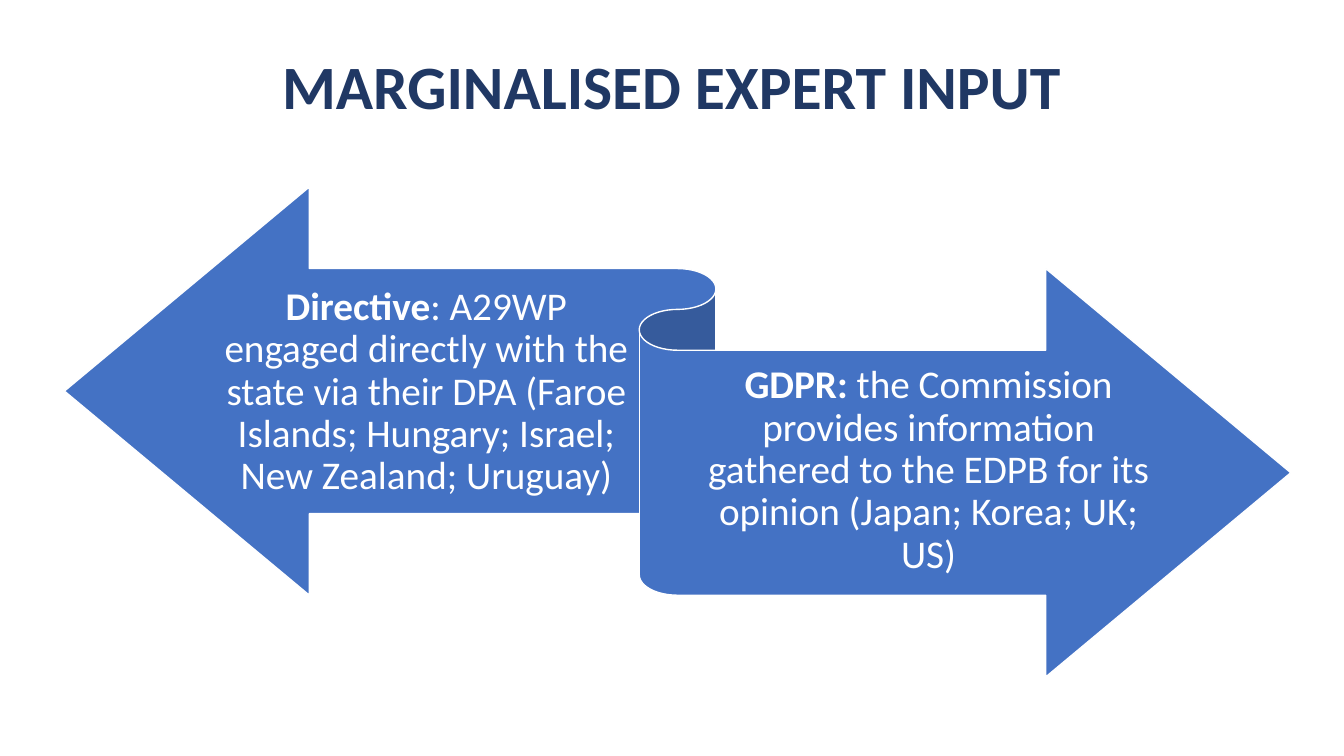
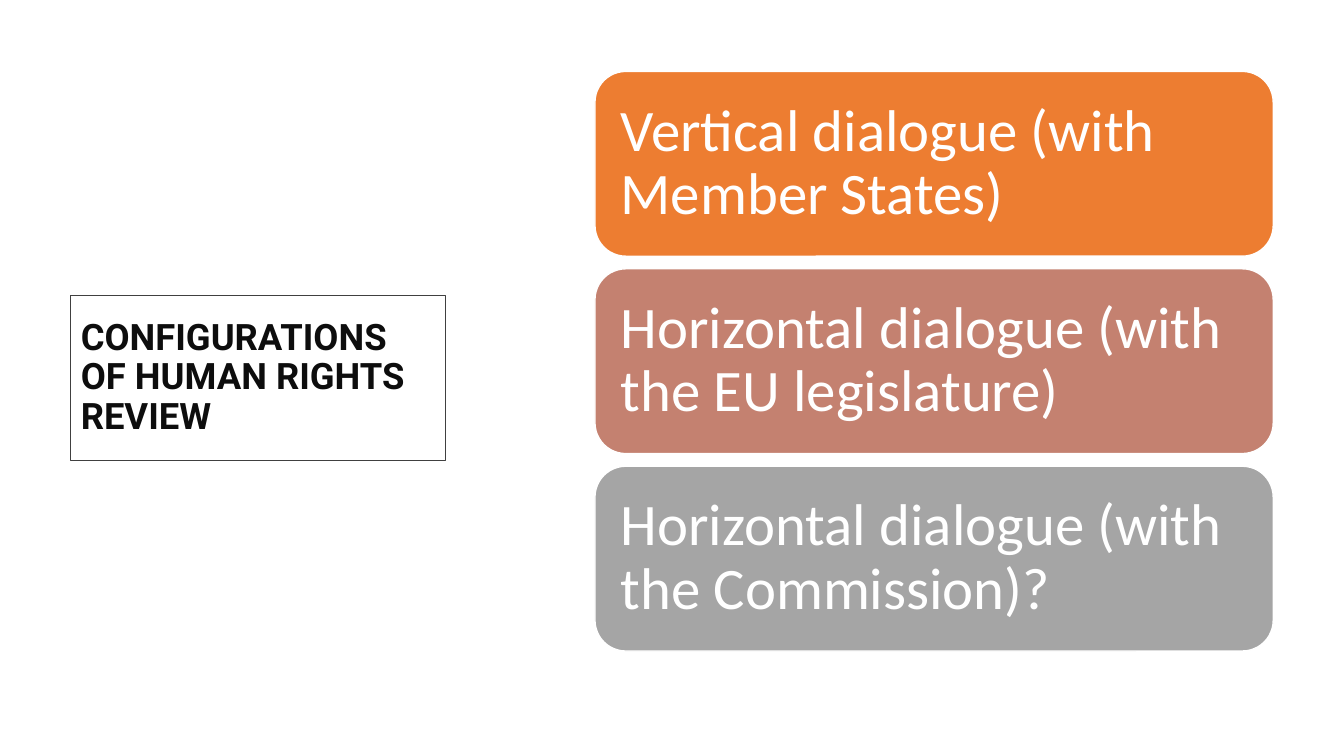
from pptx import Presentation
from pptx.dml.color import RGBColor
from pptx.enum.shapes import MSO_SHAPE
from pptx.enum.text import MSO_ANCHOR, MSO_AUTO_SIZE, PP_ALIGN
from pptx.util import Pt

RIBBON = MSO_SHAPE.LEFT_RIGHT_RIBBON
CARD = MSO_SHAPE.ROUNDED_RECTANGLE
LEFT = PP_ALIGN.LEFT
CENTER = PP_ALIGN.CENTER
MIDDLE = MSO_ANCHOR.MIDDLE
NO_AUTOFIT = MSO_AUTO_SIZE.NONE
TITLE_ONLY = 5

BODY_FONT = "Calibri"
WHITE = "FFFFFF"
NAVY = "203864"
BLUE = "4472C4"
ORANGE = "ED7D31"
ROSE = "C48170"
GREY = "A5A5A5"
NEAR_BLACK = "0D0D0D"
DARK_GREY = "404040"

DIALOGUES = [
    ("Vertical dialogue (with Member States)", ORANGE),
    ("Horizontal dialogue (with the EU legislature)", ROSE),
    ("Horizontal dialogue (with the Commission)?", GREY),
]
CARD_TOP = 51
CARD_HEIGHT = 132
CARD_GAP = 9


def color(hex_value):
    return RGBColor.from_string(hex_value)


def paint(shape, fill, line, line_width):
    shape.fill.solid()
    shape.fill.fore_color.rgb = color(fill)
    shape.line.color.rgb = color(line)
    shape.line.width = Pt(line_width)


def write(shape, runs, size, ink=WHITE, font=BODY_FONT, align=LEFT, insets=(7.2, 3.6)):
    """Fill a shape with one paragraph of (text, bold) runs; insets are (sides, top and bottom)."""
    frame = shape.text_frame
    frame.word_wrap = True
    frame.auto_size = NO_AUTOFIT
    frame.vertical_anchor = MIDDLE
    frame.margin_left = frame.margin_right = Pt(insets[0])
    frame.margin_top = frame.margin_bottom = Pt(insets[1])
    paragraph = frame.paragraphs[0]
    paragraph.alignment = align
    paragraph.line_spacing = 0.9
    paragraph.font.name = font
    paragraph.font.size = Pt(size)
    paragraph.font.color.rgb = color(ink)
    for text, bold in runs:
        run = paragraph.add_run()
        run.text = text
        run.font.bold = bold


def add_titled_slide(presentation, title, box, size, **style):
    slide = presentation.slides.add_slide(presentation.slide_layouts[TITLE_ONLY])
    shape = slide.shapes.title
    shape.left, shape.top, shape.width, shape.height = map(Pt, box)
    write(shape, [(title, True)], size, **style)
    return slide


def add_filled_shape(slide, kind, box, fill):
    shape = slide.shapes.add_shape(kind, *map(Pt, box))
    shape.shadow.inherit = False
    paint(shape, fill, WHITE, 1)
    return shape


def add_ribbon_text(slide, box, heading, text):
    text_box = slide.shapes.add_textbox(*map(Pt, box))
    write(text_box, [(heading, True), (text, False)], 28, align=CENTER, insets=(0, 8))


def add_expert_input_slide(presentation):
    slide = add_titled_slide(presentation, "MARGINALISED EXPERT INPUT",
                             (66, 29, 828, 70.5), 44, ink=NAVY, align=CENTER)
    add_filled_shape(slide, RIBBON, (46, 133.5, 876, 350), BLUE)
    add_ribbon_text(slide, (160, 194.5, 289, 171.5), "Directive",
                    ": A29WP engaged directly with the state via their DPA "
                    "(Faroe Islands; Hungary; Israel; New Zealand; Uruguay)")
    add_ribbon_text(slide, (492.5, 250.5, 341.5, 171.5), "GDPR: ",
                    "the Commission provides information gathered to the EDPB "
                    "for its opinion (Japan; Korea; UK; US)")


def add_review_slide(presentation):
    slide = add_titled_slide(presentation, "CONFIGURATIONS OF HUMAN RIGHTS REVIEW",
                             (50.5, 211, 268, 118), 26, ink=NEAR_BLACK, font="Roboto")
    paint(slide.shapes.title, WHITE, DARK_GREY, 0.75)
    for index, (text, fill) in enumerate(DIALOGUES):
        top = CARD_TOP + index * (CARD_HEIGHT + CARD_GAP)
        card = add_filled_shape(slide, CARD, (425, top, 484.5, CARD_HEIGHT), fill)
        write(card, [(text, False)], 42, insets=(12, 12))


def main():
    presentation = Presentation()
    presentation.slide_width = Pt(960)
    presentation.slide_height = Pt(540)
    add_expert_input_slide(presentation)
    add_review_slide(presentation)
    presentation.save("out.pptx")


if __name__ == "__main__":
    main()
